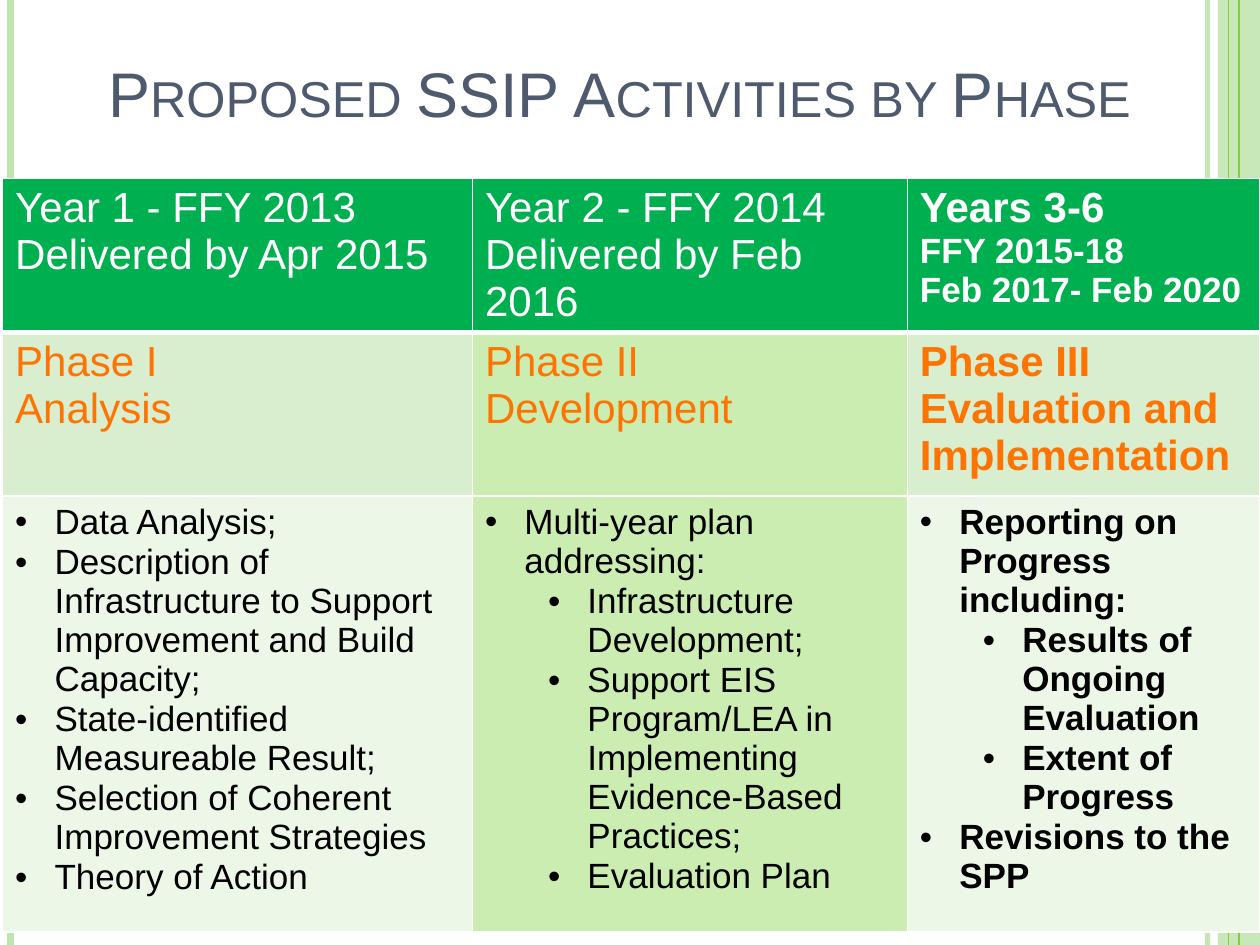
from lxml import etree
from pptx import Presentation
from pptx import util as u
from pptx.dml import color
from pptx.enum import shapes, text
from pptx.oxml import ns


def paint(target, hex_colour, opacity=100):
    target.solid()
    target.fore_color.rgb = color.RGBColor.from_string(hex_colour)
    if opacity < 100:
        for srgb in target._xPr.iter(ns.qn("a:srgbClr")):
            etree.SubElement(srgb, ns.qn("a:alpha"), val=str(opacity * 1000))


def draw_border(cell, position, side, width):
    border = etree.Element(ns.qn("a:" + side), w=str(u.Pt(width)))
    solid = etree.SubElement(border, ns.qn("a:solidFill"))
    etree.SubElement(solid, ns.qn("a:srgbClr"), val="FFFFFF")
    cell._tc.get_or_add_tcPr().insert(position, border)


deck = Presentation()
deck.slide_width, deck.slide_height = u.Pt(720), u.Pt(540)
slide = deck.slides.add_slide(deck.slide_layouts[5])

right_band = slide.shapes.add_shape(
    shapes.MSO_SHAPE.RECTANGLE, u.Pt(696), u.Pt(0), u.Pt(24), u.Pt(540))
right_band.shadow.inherit = False
paint(right_band.fill, "C0E5AF", 87)
right_band.line.fill.background()

stripes = [
    (690, "C0E5AF", 3, 93),
    (6, "C0E5AF", 4.5, 100),
    (708, "7FD13B", 1.5, 100),
    (702, "7FD13B", 0.75, 100),
]
for x, hex_colour, width, opacity in stripes:
    stripe = slide.shapes.add_connector(
        shapes.MSO_CONNECTOR.STRAIGHT, u.Pt(x), u.Pt(0), u.Pt(x), u.Pt(540))
    stripe.line.width = u.Pt(width)
    paint(stripe.line.fill, hex_colour, opacity)
    etree.SubElement(stripe._element.spPr, ns.qn("a:effectLst"))

heading = slide.shapes.title
heading.left, heading.top = u.Pt(24), u.Pt(12)
heading.width, heading.height = u.Pt(660), u.Pt(66)
heading.text_frame.auto_size = text.MSO_AUTO_SIZE.NONE
heading.text_frame.vertical_anchor = text.MSO_ANCHOR.BOTTOM
heading_line = heading.text_frame.paragraphs[0]
heading_line.alignment = text.PP_ALIGN.CENTER
heading_run = heading_line.add_run()
heading_run.text = "Proposed SSIP Activities by Phase"
heading_run.font.size = u.Pt(36)
heading_run.font.name = "Arial"
paint(heading_run.font.fill, "4E5B6F")
heading_run.font._element.set("cap", "small")

years = [
    [("Year 1 - FFY 2013", 24), ("Delivered by Apr 2015", 24)],
    [("Year 2 - FFY 2014", 24), ("Delivered by Feb 2016", 24)],
    [("Years 3-6", 24), ("FFY 2015-18", 20), ("Feb 2017- Feb 2020", 20)],
]
phases = [
    [("Phase I", 24), ("Analysis", 24)],
    [("Phase II", 24), ("Development", 24)],
    [("Phase III", 24), ("Evaluation and Implementation", 24)],
]
activities = [
    [("Data Analysis;", 0),
     ("Description of Infrastructure to Support Improvement and Build Capacity;", 0),
     ("State-identified Measureable Result;", 0),
     ("Selection of Coherent Improvement Strategies", 0),
     ("Theory of Action", 0)],
    [("Multi-year plan addressing:", 0),
     ("Infrastructure Development;", 1),
     ("Support EIS Program/LEA in Implementing Evidence-Based Practices;", 1),
     ("Evaluation Plan", 1)],
    [("Reporting on Progress including:", 0),
     ("Results of Ongoing Evaluation", 1),
     ("Extent of Progress", 1),
     ("Revisions to the SPP", 0)],
]
bands = [
    (years, 88, "FFFFFF", ["00B050", "00B050", "00B050"]),
    (phases, 93.5, "FD7403", ["D8EECE", "CCEDB1", "D8EECE"]),
    (activities, 249, "000000", ["ECF7E8", "CCEDB1", "ECF7E8"]),
]
phase_widths = [268.5, 248.5, 201.5]

plan = slide.shapes.add_table(
    3, 3, u.Pt(1.5), u.Pt(102), u.Pt(718.5), u.Pt(430.5)).table
plan.first_row = plan.horz_banding = False
for column, width in zip(plan.columns, phase_widths):
    column.width = u.Pt(width)

for r, (contents, height, ink, fills) in enumerate(bands):
    plan.rows[r].height = u.Pt(height)
    for c, lines in enumerate(contents):
        cell = plan.cell(r, c)
        paint(cell.fill, fills[c])
        top, bottom = (3 if r == 1 else 1), (3 if r == 0 else 1)
        sides = [("lnL", 1), ("lnR", 1), ("lnT", top), ("lnB", bottom)]
        for position, (side, width) in enumerate(sides):
            draw_border(cell, position, side, width)
        for i, (wording, size_or_level) in enumerate(lines):
            frame = cell.text_frame
            line = frame.add_paragraph() if i else frame.paragraphs[0]
            size = size_or_level
            if contents is activities:
                size = 20
                line.level = size_or_level
                line.space_before = line.space_after = u.Pt(0.3)
                props = line._p.get_or_add_pPr()
                props.set("marL", str(u.Pt(22.5 + 36 * size_or_level)))
                props.set("indent", str(u.Pt(-22.5)))
                etree.SubElement(props, ns.qn("a:buFont"), typeface="Arial")
                etree.SubElement(props, ns.qn("a:buChar"), char="•")
            run = line.add_run()
            run.text = wording
            run.font.size = u.Pt(size)
            run.font.name = "Arial"
            run.font.bold = c == 2
            paint(run.font.fill, ink)

deck.save("out.pptx")
